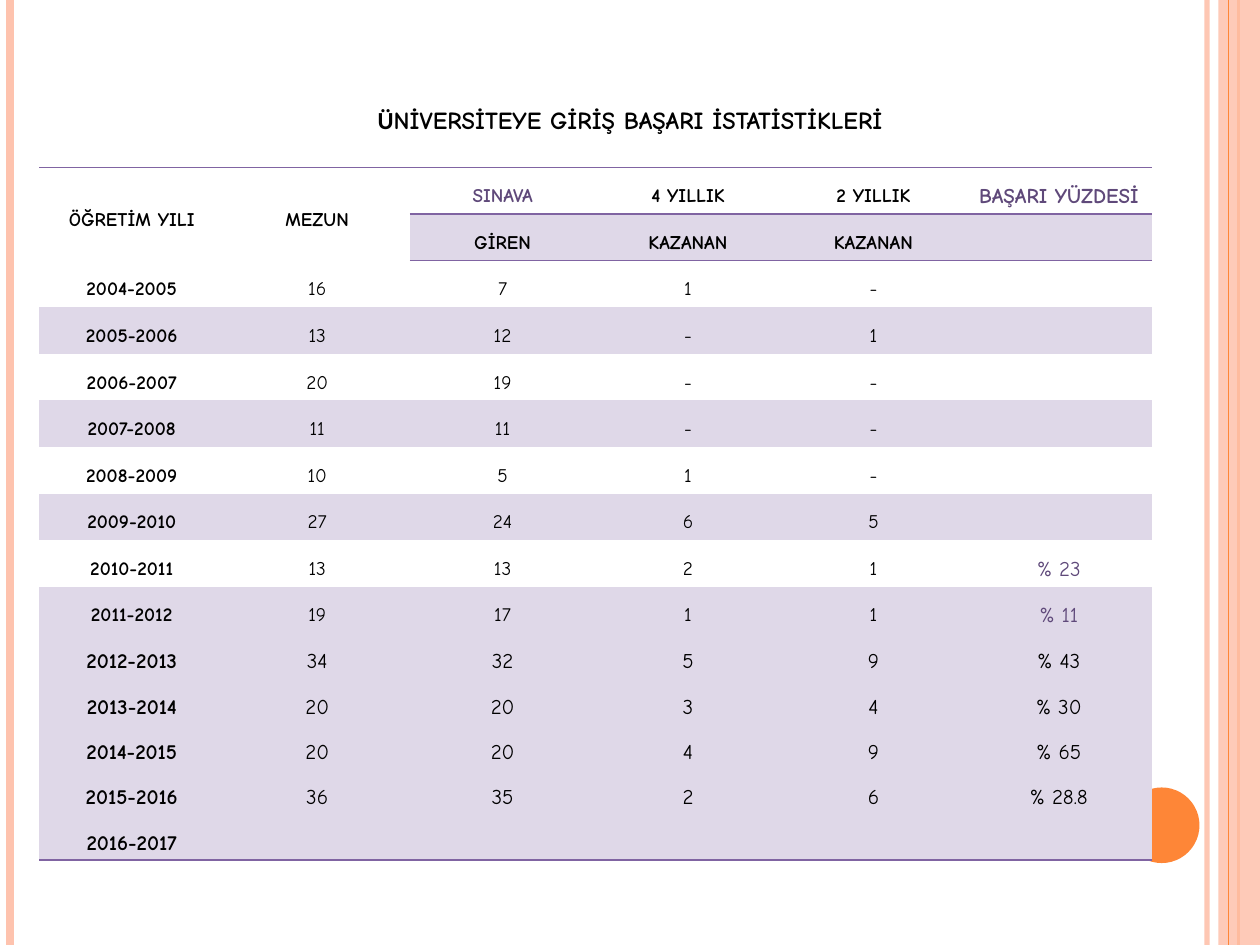
from lxml import etree
from pptx import Presentation
from pptx.dml.color import RGBColor
from pptx.enum.shapes import MSO_CONNECTOR, MSO_SHAPE
from pptx.enum.text import MSO_ANCHOR, PP_ALIGN
from pptx.oxml.ns import qn
from pptx.util import Inches, Pt

STRAIGHT = MSO_CONNECTOR.STRAIGHT
RECTANGLE, OVAL = MSO_SHAPE.RECTANGLE, MSO_SHAPE.OVAL
MIDDLE, CENTER = MSO_ANCHOR.MIDDLE, PP_ALIGN.CENTER

BLACK = RGBColor(0x00, 0x00, 0x00)
PEACH = RGBColor(0xFE, 0xC3, 0xAE)
ORANGE = RGBColor(0xFE, 0x86, 0x37)
PURPLE = RGBColor(0x80, 0x64, 0xA2)
DARK_PURPLE = RGBColor(0x5F, 0x49, 0x7A)
LAVENDER = RGBColor(0xDF, 0xD8, 0xE8)

FONT, ACCENT_FONT = "Comic Neue", "Calibri"
NO_STYLE_NO_GRID = "{2D5ABB26-0587-4C30-8999-92F81FD0307C}"
PLAIN_ROWS = {0, 2, 4, 6, 8}
HEADER_ROWS = 2
FIRST_LARGE_ROW = 10
LAST_COLUMN = 5

ROWS = [
    ["ÖĞRETİM YILI", "MEZUN", "SINAVA", "4 YILLIK", "2 YILLIK", "BAŞARI YÜZDESİ"],
    ["", "", "GİREN", "KAZANAN", "KAZANAN", ""],
    ["2004-2005", "16", "7", "1", "-", ""],
    ["2005-2006", "13", "12", "-", "1", ""],
    ["2006-2007", "20", "19", "-", "-", ""],
    ["2007-2008", "11", "11", "-", "-", ""],
    ["2008-2009", "10", "5", "1", "-", ""],
    ["2009-2010", "27", "24", "6", "5", ""],
    ["2010-2011", "13", "13", "2", "1", "% 23"],
    ["2011-2012", "19", "17", "1", "1", "% 11"],
    ["2012-2013", "34", "32", "5", "9", "% 43"],
    ["2013-2014", "20", "20", "3", "4", "% 30"],
    ["2014-2015", "20", "20", "4", "9", "% 65"],
    ["2015-2016", "36", "35", "2", "6", "% 28.8"],
    ["2016-2017", "", "", "", "", ""],
]


def add_span(para, text, *, size, font=FONT, color=BLACK, bold=False):
    span = para.add_run()
    span.text = text
    span.font.size = Pt(size)
    span.font.name = font
    span.font.bold = bold
    span.font.color.rgb = color


def set_opacity(fill, percent):
    color = fill._xPr.find(qn("a:solidFill"))[0]
    etree.SubElement(color, qn("a:alpha"), val=str(percent * 1000))


def add_border(cell, side):
    """Draw a 1 pt purple border; call it before the cell gets its fill."""
    properties = cell._tc.get_or_add_tcPr()
    line = etree.SubElement(properties, qn(f"a:ln{side}"), w=str(Pt(1)))
    fill = etree.SubElement(line, qn("a:solidFill"))
    etree.SubElement(fill, qn("a:srgbClr"), val=str(PURPLE))


class StatisticsPage:
    def __init__(self, deck):
        self.page = deck.slides.add_slide(deck.slide_layouts[5])

    def rule(self, x, color, width, opacity=100):
        line = self.page.shapes.add_connector(
            STRAIGHT, Inches(x), 0, Inches(x), Inches(7.5))
        line.line.color.rgb = color
        line.line.width = Pt(width)
        etree.SubElement(line._element.spPr, qn("a:effectLst"))
        if opacity < 100:
            set_opacity(line.line.fill, opacity)

    def shape(self, kind, left, top, width, height, color, opacity=100):
        shape = self.page.shapes.add_shape(
            kind, Inches(left), Inches(top), Inches(width), Inches(height))
        shape.shadow.inherit = False
        shape.line.fill.background()
        shape.fill.solid()
        shape.fill.fore_color.rgb = color
        if opacity < 100:
            set_opacity(shape.fill, opacity)

    def title(self, initial, rest):
        box = self.page.shapes.title
        box.left, box.top = 0, Inches(0.7)
        box.width, box.height = Inches(10), Inches(0.5)
        box.text_frame.vertical_anchor = MIDDLE
        para = box.text_frame.paragraphs[0]
        para.alignment = CENTER
        add_span(para, initial, size=14, font=ACCENT_FONT, bold=True)
        add_span(para, rest, size=14, bold=True)

    def table(self, rows):
        frame = self.page.shapes.add_table(
            len(rows), len(rows[0]), Inches(0.31), Inches(1.33), Inches(8.83), Inches(5.5))
        table = frame.table
        table.first_row = table.horz_banding = False
        table._tbl.tblPr.find(qn("a:tableStyleId")).text = NO_STYLE_NO_GRID
        for row, texts in enumerate(rows):
            table.rows[row].height = Inches(0.36 if row >= FIRST_LARGE_ROW else 0.37)
            for column, text in enumerate(texts):
                self.cell(table.cell(row, column), row, column, text)
        for column in range(2):
            table.cell(0, column).merge(table.cell(1, column))

    def cell(self, cell, row, column, text):
        cell.margin_left = cell.margin_right = Inches(0.07)
        cell.margin_top = cell.margin_bottom = 0
        cell.vertical_anchor = MIDDLE
        if row == 0 or (row == 1 and column >= 2):
            add_border(cell, "T")
        if row == len(ROWS) - 1 or (row == 0 and column >= 2):
            add_border(cell, "B")
        if row in PLAIN_ROWS or (row == 1 and column < 2):
            cell.fill.background()
        else:
            cell.fill.solid()
            cell.fill.fore_color.rgb = LAVENDER
        if not text:
            return
        is_large = row >= FIRST_LARGE_ROW or column == LAST_COLUMN
        is_accent = row < FIRST_LARGE_ROW and column == LAST_COLUMN
        para = cell.text_frame.paragraphs[0]
        para.alignment = CENTER
        para.line_spacing = 1.5
        add_span(para, text, size=12 if is_large else 11,
                 color=DARK_PURPLE if is_accent or text == "SINAVA" else BLACK,
                 bold=row < HEADER_ROWS or column == 0)


def main():
    deck = Presentation()
    deck.slide_width, deck.slide_height = Inches(10), Inches(7.5)
    page = StatisticsPage(deck)
    page.rule(9.58, PEACH, 3, opacity=93)
    page.rule(0.08, PEACH, 4.5)
    page.rule(9.83, ORANGE, 1.5)
    page.shape(RECTANGLE, 9.67, 0, 0.33, 7.5, PEACH, opacity=87)
    page.rule(9.75, ORANGE, 0.75)
    page.shape(OVAL, 8.92, 6.25, 0.6, 0.6, ORANGE)
    page.table(ROWS)
    page.title("Ü", "NİVERSİTEYE GİRİŞ BAŞARI İSTATİSTİKLERİ")
    deck.save("out.pptx")


if __name__ == "__main__":
    main()
